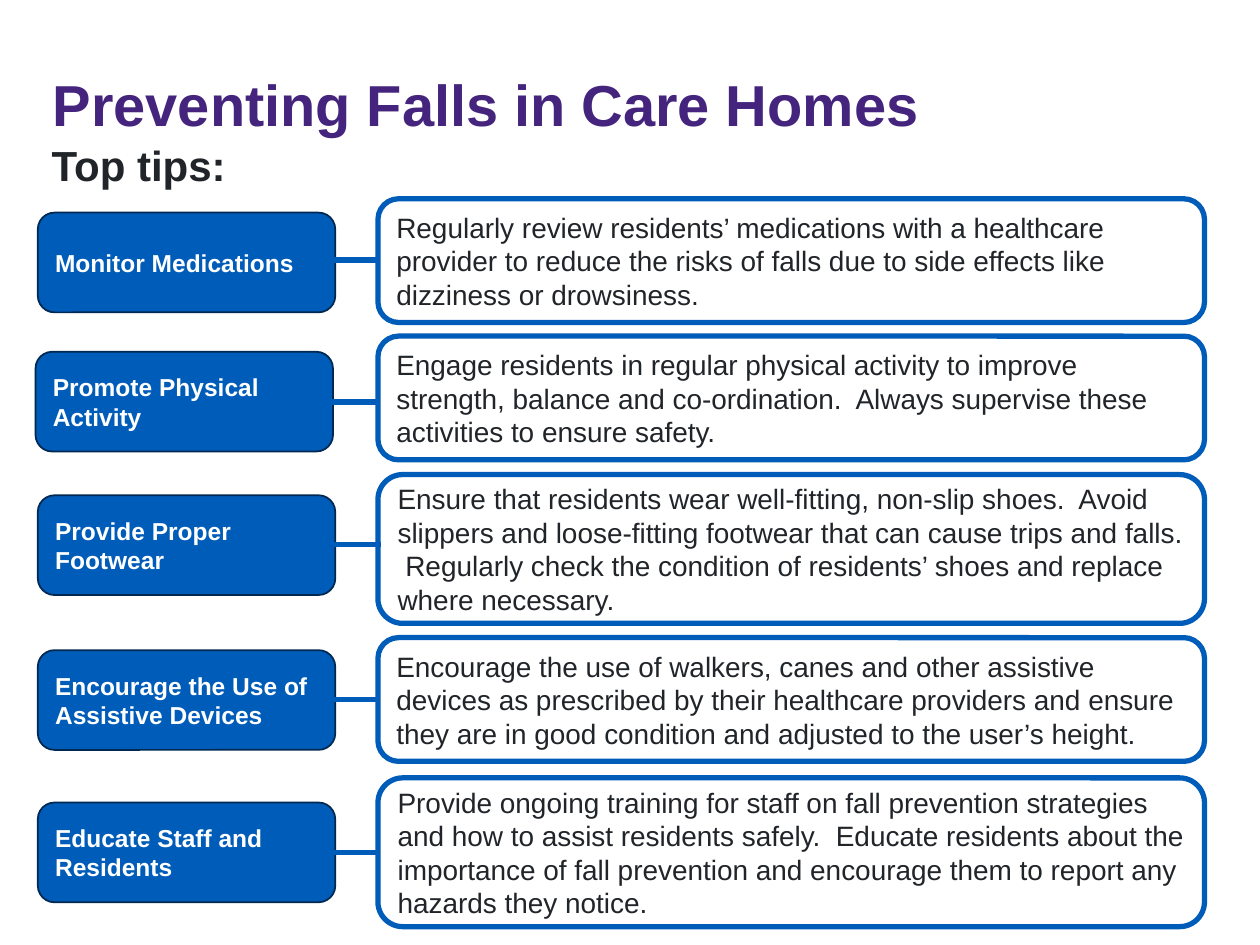
from dataclasses import dataclass
from typing import Any

import pptx
import pptx.dml.color
import pptx.enum.shapes
import pptx.enum.text
import pptx.oxml
import pptx.oxml.ns
import pptx.util

Pt = pptx.util.Pt
RGBColor = pptx.dml.color.RGBColor
Anchor = pptx.enum.text.MSO_ANCHOR

BLUE = RGBColor(0x00, 0x5C, 0xB9)
NAVY = RGBColor(0x00, 0x28, 0x51)
PURPLE = RGBColor(0x44, 0x24, 0x7D)
CHARCOAL = RGBColor(0x21, 0x25, 0x29)
WHITE = RGBColor(0xFF, 0xFF, 0xFF)

LABEL_WIDTH, LABEL_HEIGHT = 170, 57
DETAIL_LEFT, DETAIL_WIDTH = 216, 472.3
LINK_LENGTH = 28.1

TITLE_FONT = {"name": "Arial", "size": Pt(33), "bold": True}
SUBTITLE_FONT = {"name": "Arial", "size": Pt(24), "bold": True}
LABEL_FONT = {"name": "Arial", "size": Pt(14), "bold": True}
DETAIL_FONT = {"name": "Arial", "size": Pt(16), "bold": False}


@dataclass(frozen=True)
class Tip:
    label: str
    detail: str
    label_top: float
    link_top: float
    detail_top: float
    detail_height: float
    label_left: float = 21.6
    link_left: float = 187.9


TIPS = [
    Tip("Monitor Medications",
        "Regularly review residents’ medications with a healthcare provider to reduce "
        "the risks of falls due to side effects like dizziness or drowsiness.",
        121.5, 148.6, 113.6, 70.7),
    Tip("Promote Physical Activity",
        "Engage residents in regular physical activity to improve strength, balance and "
        "co-ordination.  Always supervise these activities to ensure safety.",
        201, 229.8, 192.1, 70.7, label_left=20.3),
    Tip("Provide Proper Footwear",
        "Ensure that residents wear well-fitting, non-slip shoes.  Avoid slippers and "
        "loose-fitting footwear that can cause trips and falls.  Regularly check the "
        "condition of residents’ shoes and replace where necessary.",
        283, 311.1, 271.2, 85, link_left=189.4),
    Tip("Encourage the Use of Assistive Devices",
        "Encourage the use of walkers, canes and other assistive devices as prescribed "
        "by their healthcare providers and ensure they are in good condition and "
        "adjusted to the user’s height.",
        371.5, 399.6, 364.4, 70.7),
    Tip("Educate Staff and Residents",
        "Provide ongoing training for staff on fall prevention strategies and how to "
        "assist residents safely.  Educate residents about the importance of fall "
        "prevention and encourage them to report any hazards they notice.",
        458.6, 487.2, 444.5, 85),
]


def apply_format(target: Any, values: dict[str, Any]) -> None:
    for attribute, value in values.items():
        setattr(target, attribute, value)


def write_text(shape: Any, text: str, font: dict[str, Any], color: RGBColor,
               anchor: Any, line_spacing: float = 1.0) -> None:
    apply_format(shape.text_frame, {
        "text": text, "word_wrap": True, "vertical_anchor": anchor,
        "auto_size": pptx.enum.text.MSO_AUTO_SIZE.NONE,
    })
    paragraph = shape.text_frame.paragraphs[0]
    apply_format(paragraph, {
        "alignment": pptx.enum.text.PP_ALIGN.LEFT,
        "line_spacing": line_spacing, "space_before": Pt(0),
    })
    run_font = paragraph.runs[0].font
    apply_format(run_font, font)
    run_font.color.rgb = color


def place(shape: Any, left: float, top: float, width: float, height: float) -> None:
    apply_format(shape, {"left": Pt(left), "top": Pt(top),
                         "width": Pt(width), "height": Pt(height)})


def add_card(slide: Any, left: float, top: float, width: float, height: float,
             outline: RGBColor, outline_width: float) -> Any:
    card = slide.shapes.add_shape(
        pptx.enum.shapes.MSO_SHAPE.ROUNDED_RECTANGLE,
        Pt(left), Pt(top), Pt(width), Pt(height))
    card.shadow.inherit = False
    card.fill.background()
    card.line.color.rgb = outline
    card.line.width = Pt(outline_width)
    return card


def add_link(slide: Any, left: float, top: float) -> None:
    link = slide.shapes.add_connector(
        pptx.enum.shapes.MSO_CONNECTOR.STRAIGHT,
        Pt(left), Pt(top), Pt(left + LINK_LENGTH), Pt(top))
    link.line.color.rgb = BLUE
    link.line.width = Pt(3)
    properties = link._element.spPr
    properties.append(properties.makeelement(pptx.oxml.ns.qn("a:effectLst"), {}))


def add_tip(slide: Any, tip: Tip) -> None:
    label = add_card(slide, tip.label_left, tip.label_top,
                     LABEL_WIDTH, LABEL_HEIGHT, NAVY, 1)
    label.fill.solid()
    label.fill.fore_color.rgb = BLUE
    write_text(label, tip.label, LABEL_FONT, WHITE, Anchor.MIDDLE)
    add_link(slide, tip.link_left, tip.link_top)
    detail = add_card(slide, DETAIL_LEFT, tip.detail_top,
                      DETAIL_WIDTH, tip.detail_height, BLUE, 3)
    write_text(detail, tip.detail, DETAIL_FONT, CHARCOAL, Anchor.MIDDLE)


def add_headings(slide: Any) -> None:
    title, subtitle = slide.shapes.title, slide.placeholders[1]
    place(title, 23, 40.3, 553.7, 52.6)
    write_text(title, "Preventing Falls in Care Homes", TITLE_FONT, PURPLE, Anchor.TOP, 0.9)
    place(subtitle, 22.3, 79.2, 668.2, 444.2)
    write_text(subtitle, "Top tips:", SUBTITLE_FONT, CHARCOAL, Anchor.TOP, 0.9)
    paragraph_properties = subtitle.text_frame.paragraphs[0]._p.get_or_add_pPr()
    for attribute in ("marL", "indent"):
        paragraph_properties.set(attribute, "0")
    paragraph_properties.append(
        paragraph_properties.makeelement(pptx.oxml.ns.qn("a:buNone"), {}))


def main() -> None:
    presentation = pptx.Presentation()
    apply_format(presentation, {"slide_width": Pt(720), "slide_height": Pt(540)})
    slide = presentation.slides.add_slide(presentation.slide_layouts[1])
    add_headings(slide)
    for tip in TIPS:
        add_tip(slide, tip)
    presentation.save("out.pptx")


if __name__ == "__main__":
    main()
